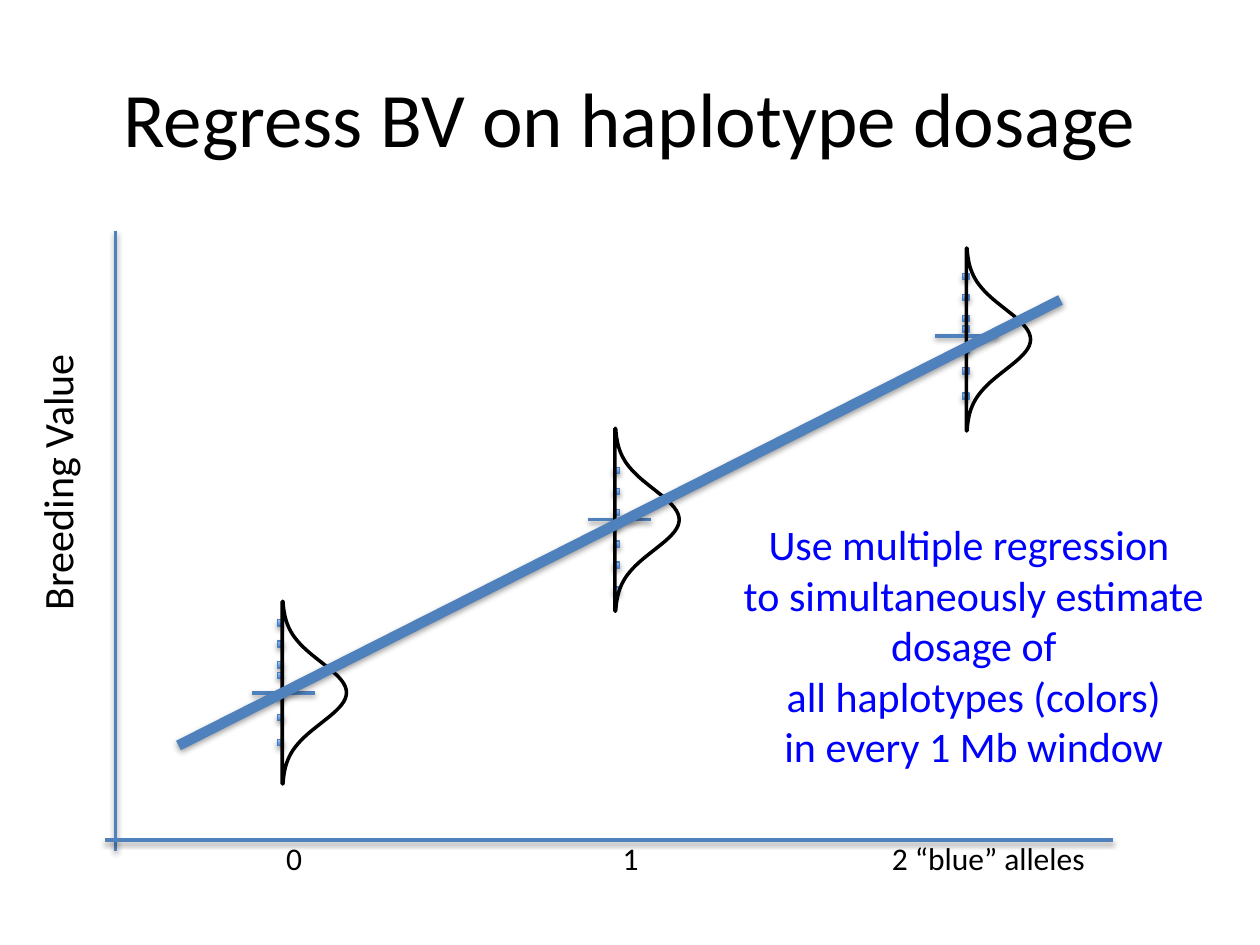
import dataclasses
import math

import lxml.etree
import pptx
import pptx.dml.color
import pptx.enum.shapes
import pptx.enum.text
import pptx.oxml.ns
import pptx.util

Pt = pptx.util.Pt
Align = pptx.enum.text.PP_ALIGN


@dataclasses.dataclass(frozen=True)
class Theme:
    font: str = "Calibri"
    black: str = "000000"
    note: str = "0000FF"
    line: str = "4F81BD"
    marker_line: str = "4B7EBC"
    marker_dark: str = "3F80CE"
    marker_light: str = "A4C4FF"
    title_size: float = 44
    body_size: float = 24
    label_size: float = 18
    thin: float = 2
    thick: float = 6


@dataclasses.dataclass(frozen=True)
class Label:
    text: str
    left: float
    top: float
    width: float
    height: float
    size: float
    color: str = Theme.black
    align: Align = Align.CENTER
    rotation: float = 0
    wrap: bool = False


@dataclasses.dataclass(frozen=True)
class Line:
    start_x: float
    start_y: float
    end_x: float
    end_y: float
    width: float = Theme.thin


@dataclasses.dataclass(frozen=True)
class DosageGroup:
    marker_left: float
    marker_top: float
    tick_left: float
    tick_y: float
    bell_left: float
    bell_top: float


THEME = Theme()
MARKER_SIZE = 3.6
MARKER_OFFSETS = (0, 12, 24, 30, 42, 54, 68.4)
TICK_WIDTH = 36
BELL_WIDTH = 36.7
BELL_HEIGHT = 104.4
BELL_STEPS = 60
NOTE = (
    "Use multiple regression\n to simultaneously estimate\v dosage of\n"
    " all haplotypes (colors)\n in every 1 Mb window"
)

AXES = (Line(66, 131.8, 66, 486), Line(635.8, 480, 59.8, 480))
REGRESSION = Line(102, 426, 606, 171.4, THEME.thick)
GROUPS = (
    DosageGroup(158.4, 354.2, 144, 396, 161.3, 343.6),
    DosageGroup(350.6, 267.1, 336.2, 297, 351.4, 244.8),
    DosageGroup(550.1, 156.2, 534.2, 192, 552.2, 141.8),
)
LABELS = (
    Label("Regress BV on haplotype dosage", 36, 21.6, 648, 90, THEME.title_size, wrap=True),
    Label("0", 156.2, 475.9, 23.8, 29, THEME.label_size),
    Label("1", 348.5, 475.9, 23.8, 29, THEME.label_size),
    Label("2 “blue” alleles", 501.8, 475.9, 126, 29, THEME.label_size),
    Label("Breeding Value", -49.7, 255.6, 164.2, 36, THEME.body_size,
          align=Align.LEFT, rotation=270),
    Label(NOTE, 410.4, 293, 286.6, 152.6, THEME.body_size, THEME.note),
)


def rgb(value: str) -> pptx.dml.color.RGBColor:
    return pptx.dml.color.RGBColor.from_string(value)


def style_line(shape, color: str, width: float) -> None:
    shape.line.color.rgb = rgb(color)
    shape.line.width = Pt(width)


def add_shadow(shape, distance: float, opacity: int) -> None:
    qn = pptx.oxml.ns.qn
    properties = shape.element.spPr
    for existing in properties.findall(qn("a:effectLst")):
        properties.remove(existing)
    effects = lxml.etree.SubElement(properties, qn("a:effectLst"))
    shadow = lxml.etree.SubElement(
        effects, qn("a:outerShdw"), blurRad=str(Pt(3.15)), dist=str(Pt(distance)),
        dir="5400000", rotWithShape="0")
    color = lxml.etree.SubElement(shadow, qn("a:srgbClr"), val=THEME.black)
    lxml.etree.SubElement(color, qn("a:alpha"), val=str(opacity * 1000))


def draw_line(page, line: Line) -> None:
    connector = page.shapes.add_connector(
        pptx.enum.shapes.MSO_CONNECTOR.STRAIGHT,
        Pt(line.start_x), Pt(line.start_y), Pt(line.end_x), Pt(line.end_y))
    style_line(connector, THEME.line, line.width)
    add_shadow(connector, 1.57, 38)


def draw_label(page, label: Label) -> None:
    box = page.shapes.add_textbox(
        Pt(label.left), Pt(label.top), Pt(label.width), Pt(label.height))
    box.rotation = label.rotation
    frame = box.text_frame
    frame.text = label.text
    frame.word_wrap = label.wrap
    if label.wrap:
        frame.vertical_anchor = pptx.enum.text.MSO_ANCHOR.MIDDLE
    else:
        frame.auto_size = pptx.enum.text.MSO_AUTO_SIZE.SHAPE_TO_FIT_TEXT
    for para in frame.paragraphs:
        para.alignment = label.align
        for span in para.runs:
            span.font.name = THEME.font
            span.font.size = Pt(label.size)
            span.font.color.rgb = rgb(label.color)


def draw_markers(page, group: DosageGroup) -> None:
    for offset in MARKER_OFFSETS:
        marker = page.shapes.add_shape(
            pptx.enum.shapes.MSO_SHAPE.RECTANGLE,
            Pt(group.marker_left), Pt(group.marker_top + offset),
            Pt(MARKER_SIZE), Pt(MARKER_SIZE))
        marker.fill.gradient()
        marker.fill.gradient_angle = 90
        stops = zip(marker.fill.gradient_stops, (THEME.marker_dark, THEME.marker_light))
        for position, (stop, color) in enumerate(stops):
            stop.position = position
            stop.color.rgb = rgb(color)
        style_line(marker, THEME.marker_line, 0.75)
        add_shadow(marker, 1.81, 35)


def draw_bell(page, group: DosageGroup) -> None:
    points = []
    for step in range(BELL_STEPS + 1):
        deviation = 6 * step / BELL_STEPS - 3
        density = math.exp(-deviation ** 2 / 2)
        points.append((Pt(group.bell_left + BELL_WIDTH * density),
                       Pt(group.bell_top + BELL_HEIGHT * step / BELL_STEPS)))
    builder = page.shapes.build_freeform(Pt(group.bell_left), Pt(group.bell_top))
    builder.add_line_segments(
        points + [(Pt(group.bell_left), Pt(group.bell_top + BELL_HEIGHT))], close=True)
    bell = builder.convert_to_shape()
    bell.shadow.inherit = False
    bell.fill.background()
    style_line(bell, THEME.black, THEME.thin)


def main() -> None:
    deck = pptx.Presentation()
    deck.slide_width, deck.slide_height = Pt(720), Pt(540)
    page = deck.slides.add_slide(deck.slide_layouts[6])
    for axis in AXES:
        draw_line(page, axis)
    for group in GROUPS:
        draw_markers(page, group)
        draw_line(page, Line(group.tick_left, group.tick_y,
                             group.tick_left + TICK_WIDTH, group.tick_y))
        draw_bell(page, group)
    draw_line(page, REGRESSION)
    for label in LABELS:
        draw_label(page, label)
    deck.save("out.pptx")


if __name__ == "__main__":
    main()
